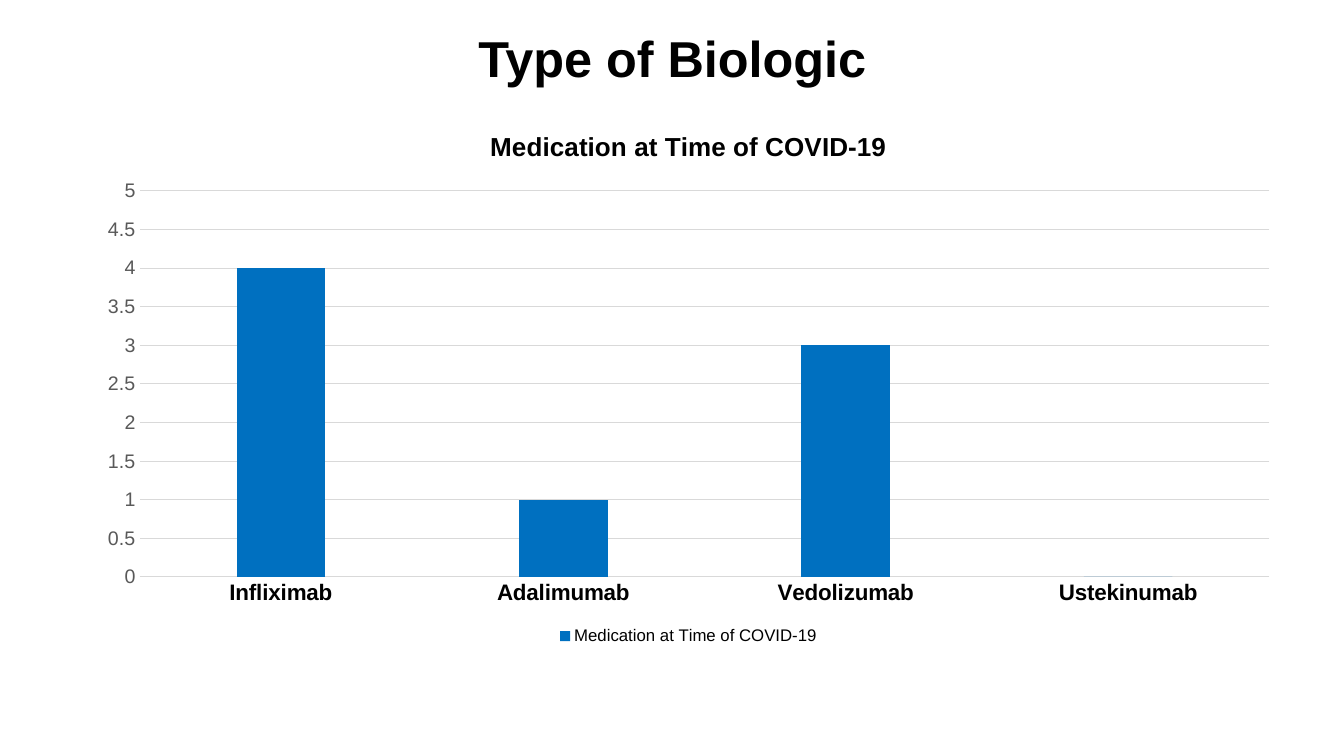
from pptx import Presentation
from pptx.chart.data import CategoryChartData
from pptx.dml.color import RGBColor
from pptx.enum.chart import XL_CHART_TYPE as ChartType, XL_LEGEND_POSITION as LegendPosition
from pptx.enum.chart import XL_TICK_MARK as TickMark
from pptx.enum.text import MSO_ANCHOR as Anchor, PP_ALIGN as Align
from pptx.util import Inches, Pt

FONT = "Arial"
BLACK, GRAY, GRID, BLUE = "000000", "595959", "D9D9D9", "0070C0"
MEASURE = "Medication at Time of COVID-19"
PATIENTS = {"Infliximab": 4, "Adalimumab": 1, "Vedolizumab": 3, "Ustekinumab": 0}


def color(value):
    """Turn a hex string into a colour."""
    return RGBColor.from_string(value)


def style_font(font, size, fill=BLACK, bold=False):
    """Set the typeface, size, colour and weight of a font."""
    font.name, font.size, font.bold = FONT, Pt(size), bold
    font.color.rgb = color(fill)


def style_line(line, fill=GRID, width=0.75):
    """Set the colour and width of a line."""
    line.color.rgb = color(fill)
    line.width = Pt(width)


def write(frame, text, align=Align.CENTER, **font_format):
    """Write one formatted paragraph into a text frame."""
    para = frame.paragraphs[0]
    para.alignment = align
    span = para.add_run()
    span.text = text
    style_font(span.font, **font_format)


def add_heading(page, left, top, width, height):
    """Place the slide heading in the given box."""
    box = page.shapes.add_textbox(Inches(left), Inches(top), Inches(width), Inches(height))
    frame = box.text_frame
    frame.word_wrap = True
    frame.vertical_anchor = Anchor.MIDDLE
    write(frame, "Type of Biologic", size=36, bold=True)


def style_axes(chart):
    """Format the category and value axes."""
    names, counts = chart.category_axis, chart.value_axis
    for axis in (names, counts):
        axis.major_tick_mark = axis.minor_tick_mark = TickMark.NONE
    style_font(names.tick_labels.font, 16, bold=True)
    style_line(names.format.line)
    style_font(counts.tick_labels.font, 14, GRAY)
    counts.format.line.fill.background()
    counts.minimum_scale, counts.maximum_scale, counts.major_unit = 0, 5, 0.5
    counts.has_major_gridlines = True
    style_line(counts.major_gridlines.format.line)


def add_medication_chart(page, left, top, width, height):
    """Place the medication column chart in the given box."""
    data = CategoryChartData()
    data.categories = list(PATIENTS)
    data.add_series(MEASURE, list(PATIENTS.values()))
    chart = page.shapes.add_chart(
        ChartType.COLUMN_CLUSTERED, Inches(left), Inches(top), Inches(width), Inches(height), data
    ).chart
    style_font(chart.font, 10)
    chart.has_title = True
    write(chart.chart_title.text_frame, MEASURE, size=18.6, bold=True)
    chart.chart_title.include_in_layout = False
    style_axes(chart)

    plot = chart.plots[0]
    plot.gap_width, plot.overlap, plot.vary_by_categories = 219, -27, False
    columns = plot.series[0]
    columns.invert_if_negative = False
    columns.format.fill.solid()
    columns.format.fill.fore_color.rgb = color(BLUE)

    chart.has_legend = True
    chart.legend.position = LegendPosition.BOTTOM
    chart.legend.include_in_layout = False
    style_font(chart.legend.font, 12)


def main():
    """Build and save the deck."""
    deck = Presentation()
    deck.slide_width, deck.slide_height = Inches(13.33), Inches(7.5)
    page = deck.slides.add_slide(deck.slide_layouts[6])
    add_heading(page, 0.67, 0.3, 12, 0.53)
    add_medication_chart(page, 0.83, 1.07, 12, 5.37)
    deck.save("out.pptx")


if __name__ == "__main__":
    main()
